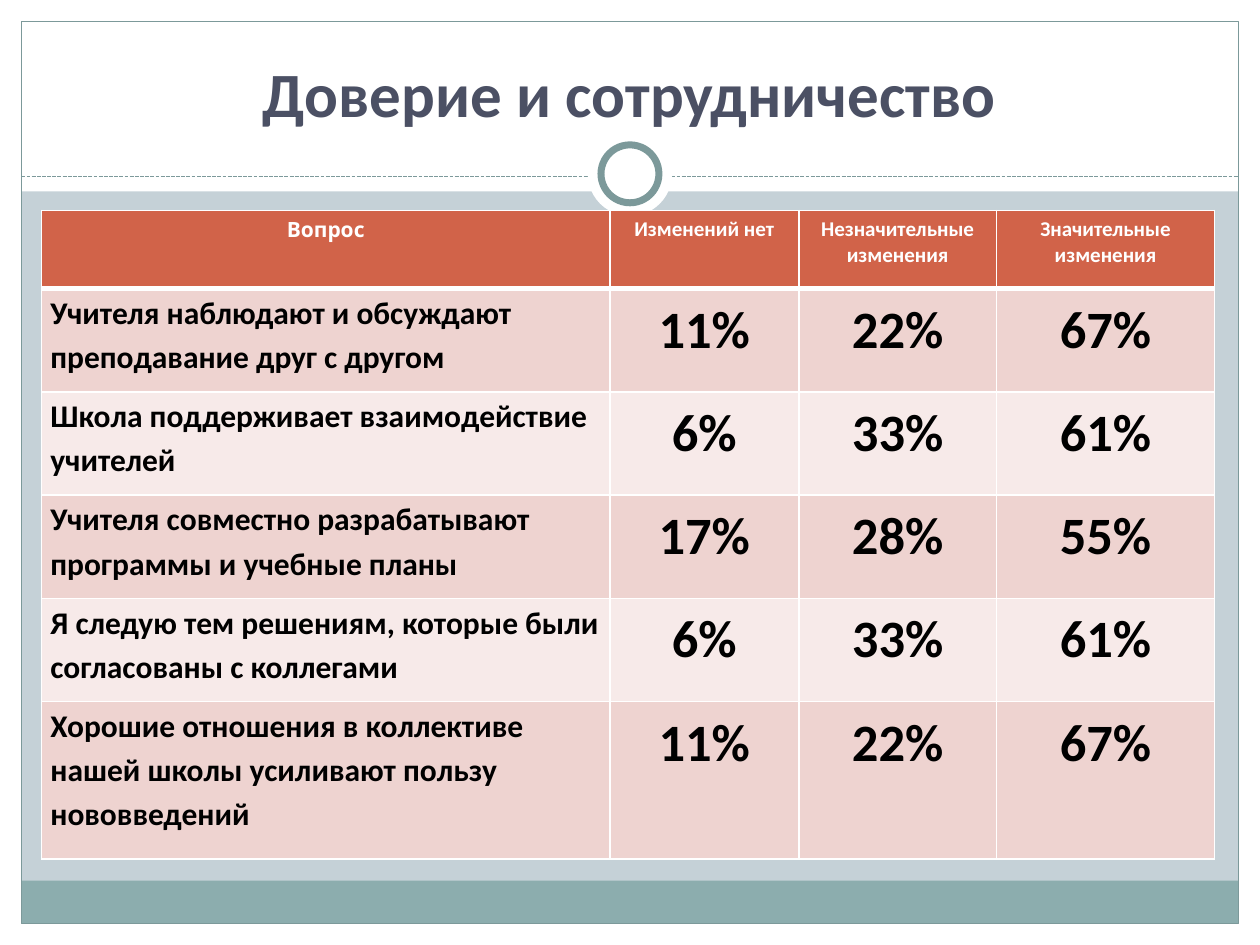
from lxml import etree
from pptx import Presentation
from pptx.dml.color import RGBColor
from pptx.enum.dml import MSO_LINE
from pptx.enum.shapes import MSO_CONNECTOR, MSO_SHAPE
from pptx.enum.text import MSO_ANCHOR, PP_ALIGN
from pptx.oxml.ns import qn
from pptx.util import Inches, Pt

RECTANGLE, OVAL = MSO_SHAPE.RECTANGLE, MSO_SHAPE.OVAL
STRAIGHT = MSO_CONNECTOR.STRAIGHT
DASH = MSO_LINE.SQUARE_DOT
LEFT, CENTER = PP_ALIGN.LEFT, PP_ALIGN.CENTER
TOP, BOTTOM = MSO_ANCHOR.TOP, MSO_ANCHOR.BOTTOM

WHITE = RGBColor(0xFF, 0xFF, 0xFF)
BLACK = RGBColor(0x00, 0x00, 0x00)
BACKGROUND = RGBColor(0xC5, 0xD1, 0xD7)
FOOTER = RGBColor(0x8C, 0xAD, 0xAE)
FRAME = RGBColor(0x7C, 0x99, 0x9A)
TITLE = RGBColor(0x4B, 0x50, 0x64)
HEADER = RGBColor(0xD1, 0x63, 0x49)
BANDS = (RGBColor(0xEE, 0xD3, 0xD0), RGBColor(0xF7, 0xEA, 0xE9))

TITLE_ONLY = 5
WIDTH, HEIGHT, MARGIN = 10, 7.5, 0.17
INNER_WIDTH = WIDTH - 2 * MARGIN
RING_CENTER = (5, 1.38)

HEADINGS = ("Вопрос", "Изменений нет", "Незначительные изменения",
            "Значительные изменения")
ANSWERS = (
    ("Учителя наблюдают и обсуждают преподавание друг с другом", "11%", "22%", "67%"),
    ("Школа поддерживает взаимодействие учителей", "6%", "33%", "61%"),
    ("Учителя совместно разрабатывают программы и учебные планы", "17%", "28%", "55%"),
    ("Я следую тем решениям, которые были согласованы с коллегами", "6%", "33%", "61%"),
    ("Хорошие отношения в коллективе нашей школы усиливают пользу нововведений",
     "11%", "22%", "67%"),
)
COLUMN_WIDTHS = (4.51, 1.5, 1.57, 1.73)
ROW_HEIGHTS = (0.62, 0.82, 0.82, 0.82, 0.82, 1.25)


class SlideBuilder:
    def __init__(self, slide, font="Calibri"):
        self.slide = slide
        self.font = font

    def background(self, color):
        fill = self.slide.background.fill
        fill.solid()
        fill.fore_color.rgb = color

    def shape(self, kind, left, top, width, height, fill=None, line=None, weight=0.75):
        shape = self.slide.shapes.add_shape(
            kind, Inches(left), Inches(top), Inches(width), Inches(height))
        shape.shadow.inherit = False
        if fill is None:
            shape.fill.background()
        else:
            shape.fill.solid()
            shape.fill.fore_color.rgb = fill
        if line is None:
            shape.line.fill.background()
        else:
            shape.line.color.rgb = line
            shape.line.width = Pt(weight)

    def circle(self, center, diameter, **style):
        x, y = center
        self.shape(OVAL, x - diameter / 2, y - diameter / 2, diameter, diameter, **style)

    def dashed_line(self, left, right, y, color):
        connector = self.slide.shapes.add_connector(
            STRAIGHT, Inches(left), Inches(y), Inches(right), Inches(y))
        connector.line.color.rgb = color
        connector.line.width = Pt(0.75)
        connector.line.dash_style = DASH
        etree.SubElement(connector._element.spPr, qn("a:effectLst"))

    def text(self, frame, text, size, color, alignment=CENTER, font=None):
        paragraph = frame.paragraphs[0]
        paragraph.alignment = alignment
        run = paragraph.add_run()
        run.text = text
        run.font.name = font or self.font
        run.font.size = Pt(size)
        run.font.bold = True
        run.font.color.rgb = color
        return paragraph

    def title(self, text, left, top, width, height):
        title = self.slide.shapes.title
        title.left, title.top = Inches(left), Inches(top)
        title.width, title.height = Inches(width), Inches(height)
        title.text_frame.word_wrap = True
        title.text_frame.vertical_anchor = BOTTOM
        self.text(title.text_frame, text, 36, TITLE)
        # Bring the title in front of the white bands.
        self.slide.shapes._spTree.append(title._element)

    def cell_borders(self, cell, bottom_weights):
        """Set white borders; the weights are for the top and bottom sides."""
        top, bottom = bottom_weights
        properties = cell._tc.get_or_add_tcPr()
        sides = (("a:lnL", 1), ("a:lnR", 1), ("a:lnT", top), ("a:lnB", bottom))
        for position, (side, weight) in enumerate(sides):
            border = etree.Element(qn(side), w=str(Pt(weight)))
            fill = etree.SubElement(border, qn("a:solidFill"))
            etree.SubElement(fill, qn("a:srgbClr"), val=str(WHITE))
            properties.insert(position, border)

    def header_cell(self, cell, text, font):
        self.text(cell.text_frame, text, 12, WHITE, font=font)
        self.cell_borders(cell, (1, 3))

    def body_cell(self, cell, text, size, alignment, first_row):
        cell.margin_left = cell.margin_right = Inches(0.07)
        cell.margin_top = cell.margin_bottom = 0
        paragraph = self.text(cell.text_frame, text, size, BLACK, alignment)
        paragraph.line_spacing = 1.15
        paragraph.space_after = Pt(10)
        self.cell_borders(cell, (3 if first_row else 1, 1))

    def table(self, left, top, headings, rows):
        table = self.slide.shapes.add_table(
            len(rows) + 1, len(headings), Inches(left), Inches(top),
            Inches(sum(COLUMN_WIDTHS)), Inches(sum(ROW_HEIGHTS))).table
        for column, width in zip(table.columns, COLUMN_WIDTHS):
            column.width = Inches(width)
        for row, height in zip(table.rows, ROW_HEIGHTS):
            row.height = Inches(height)
        for i, texts in enumerate((headings, *rows)):
            for j, text in enumerate(texts):
                cell = table.cell(i, j)
                cell.vertical_anchor = TOP
                cell.fill.solid()
                cell.fill.fore_color.rgb = BANDS[(i - 1) % 2] if i else HEADER
                if i == 0:
                    self.header_cell(cell, text, "Cabin" if j == 0 else self.font)
                else:
                    size, alignment = (18, LEFT) if j == 0 else (30, CENTER)
                    self.body_cell(cell, text, size, alignment, i == 1)


def main():
    presentation = Presentation()
    presentation.slide_width, presentation.slide_height = Inches(WIDTH), Inches(HEIGHT)
    slide = presentation.slides.add_slide(presentation.slide_layouts[TITLE_ONLY])
    builder = SlideBuilder(slide)

    builder.background(BACKGROUND)
    for band in ((0, HEIGHT - MARGIN, WIDTH, MARGIN), (0, 0, WIDTH, 1.52),
                 (0, 0, MARGIN, HEIGHT), (WIDTH - MARGIN, 0, MARGIN, HEIGHT)):
        builder.shape(RECTANGLE, *band, fill=WHITE)
    builder.shape(RECTANGLE, MARGIN, 6.99, INNER_WIDTH, 0.34, fill=FOOTER)
    builder.shape(RECTANGLE, MARGIN, MARGIN, INNER_WIDTH, HEIGHT - 2 * MARGIN, line=FRAME)
    builder.dashed_line(MARGIN, WIDTH - MARGIN, 1.4, FRAME)
    builder.circle(RING_CENTER, 0.67, fill=WHITE)
    builder.circle(RING_CENTER, 0.46, fill=WHITE, line=FRAME, weight=4)

    builder.title("Доверие и сотрудничество", 0.33, 0.25, 9.33, 0.83)
    builder.table(0.33, 1.67, HEADINGS, ANSWERS)
    presentation.save("out.pptx")


if __name__ == "__main__":
    main()
